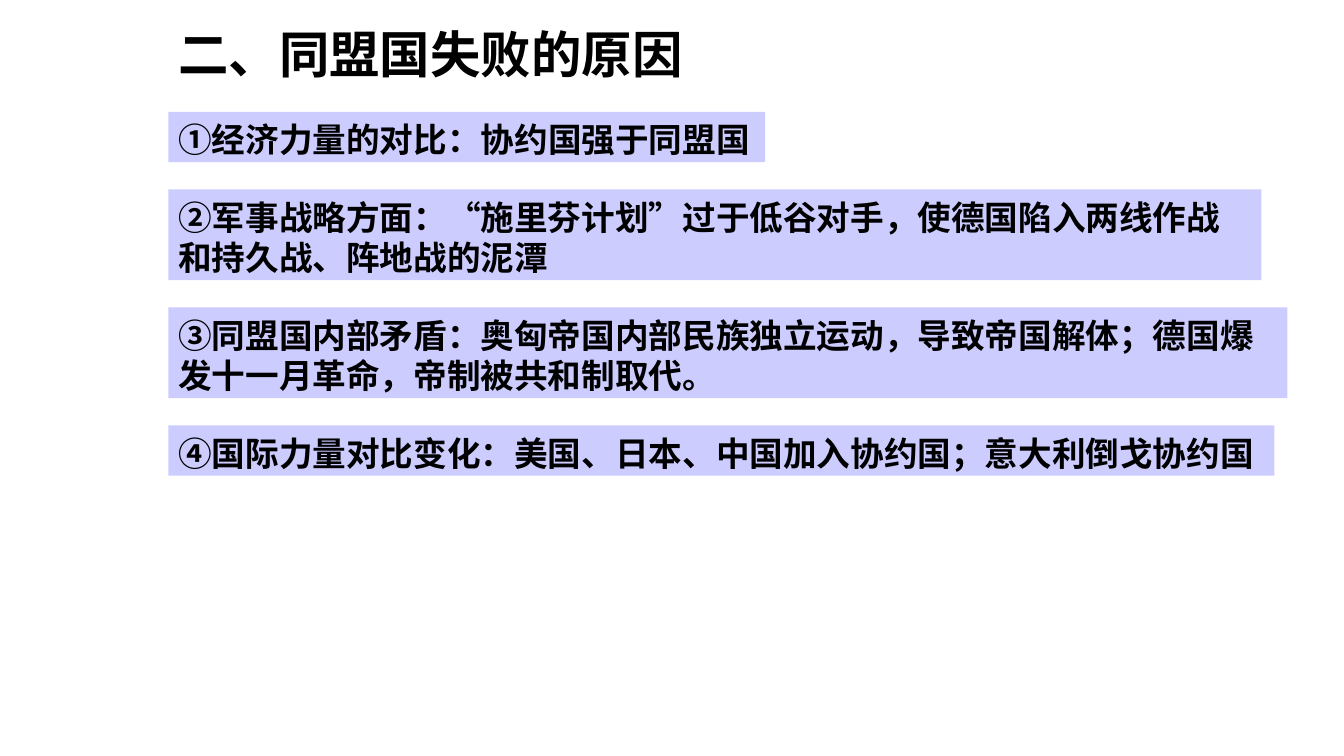
from lxml import etree
from pptx import Presentation
from pptx import util as u
from pptx.dml.color import RGBColor
from pptx.enum import lang, shapes, text
from pptx.oxml.ns import qn

SCALE = 9144  # EMU per px, at 100 px to the inch
WIDTH, HEIGHT = 1333, 750
LEFT = 167
TITLE = "二、同盟国失败的原因"
TITLE_BOX = (LEFT, 14, 831, 70)
REASONS = [  # text, box width, lines
    ("①经济力量的对比：协约国强于同盟国", 592, 1),
    ("②军事战略方面：“施里芬计划”过于低谷对手，使德国陷入两线作战和持久战、阵地战的泥潭", 1084, 2),
    ("③同盟国内部矛盾：奥匈帝国内部民族独立运动，导致帝国解体；德国爆发十一月革命，帝制被共和制取代。", 1110, 2),
    ("④国际力量对比变化：美国、日本、中国加入协约国；意大利倒戈协约国", 1097, 1),
]
REASONS_TOP, LINE, PADDING, GAP = 111, 40, 10, 27
TITLE_FORMAT = {"size": u.Pt(36), "name": "Noto Sans CJK JP"}
REASON_FORMAT = {"size": u.Pt(24), "name": "Noto Sans CJK SC"}
COMMON_FORMAT = {"bold": True, "language_id": lang.MSO_LANGUAGE_ID.SIMPLIFIED_CHINESE}


def px(length):
    return u.Emu(length * SCALE)


def color(hex_value):
    return RGBColor.from_string(hex_value)


def write(shape, content, font_format, top_inset):
    frame = shape.text_frame
    frame_format = {
        "word_wrap": True,
        "vertical_anchor": text.MSO_ANCHOR.TOP,
        "margin_left": px(10),
        "margin_right": px(10),
        "margin_top": px(top_inset),
        "margin_bottom": 0,
    }
    for name, value in frame_format.items():
        setattr(frame, name, value)
    paragraph = frame.paragraphs[0]
    paragraph.alignment = text.PP_ALIGN.LEFT
    paragraph.line_spacing = u.Pt(font_format["size"].pt * 1.2)
    run = paragraph.add_run()
    run.text = content
    run.font.color.rgb = color("000000")
    for name, value in {**COMMON_FORMAT, **font_format}.items():
        setattr(run.font, name, value)
    east_asian = etree.SubElement(run._r.get_or_add_rPr(), qn("a:ea"))
    east_asian.set("typeface", font_format["name"])


def main():
    presentation = Presentation()
    presentation.slide_width, presentation.slide_height = px(WIDTH), px(HEIGHT)
    slide = presentation.slides.add_slide(presentation.slide_layouts[6])

    title = slide.shapes.add_textbox(*map(px, TITLE_BOX))
    write(title, TITLE, TITLE_FORMAT, 9)

    top = REASONS_TOP
    for content, width, lines in REASONS:
        height = lines * LINE + PADDING
        box = slide.shapes.add_shape(
            shapes.MSO_SHAPE.RECTANGLE, px(LEFT), px(top), px(width), px(height))
        box.shadow.inherit = False
        box.fill.solid()
        box.fill.fore_color.rgb = color("CCCCFF")
        box.line.fill.background()
        write(box, content, REASON_FORMAT, 7)
        top += height + GAP

    presentation.save("out.pptx")


if __name__ == "__main__":
    main()
